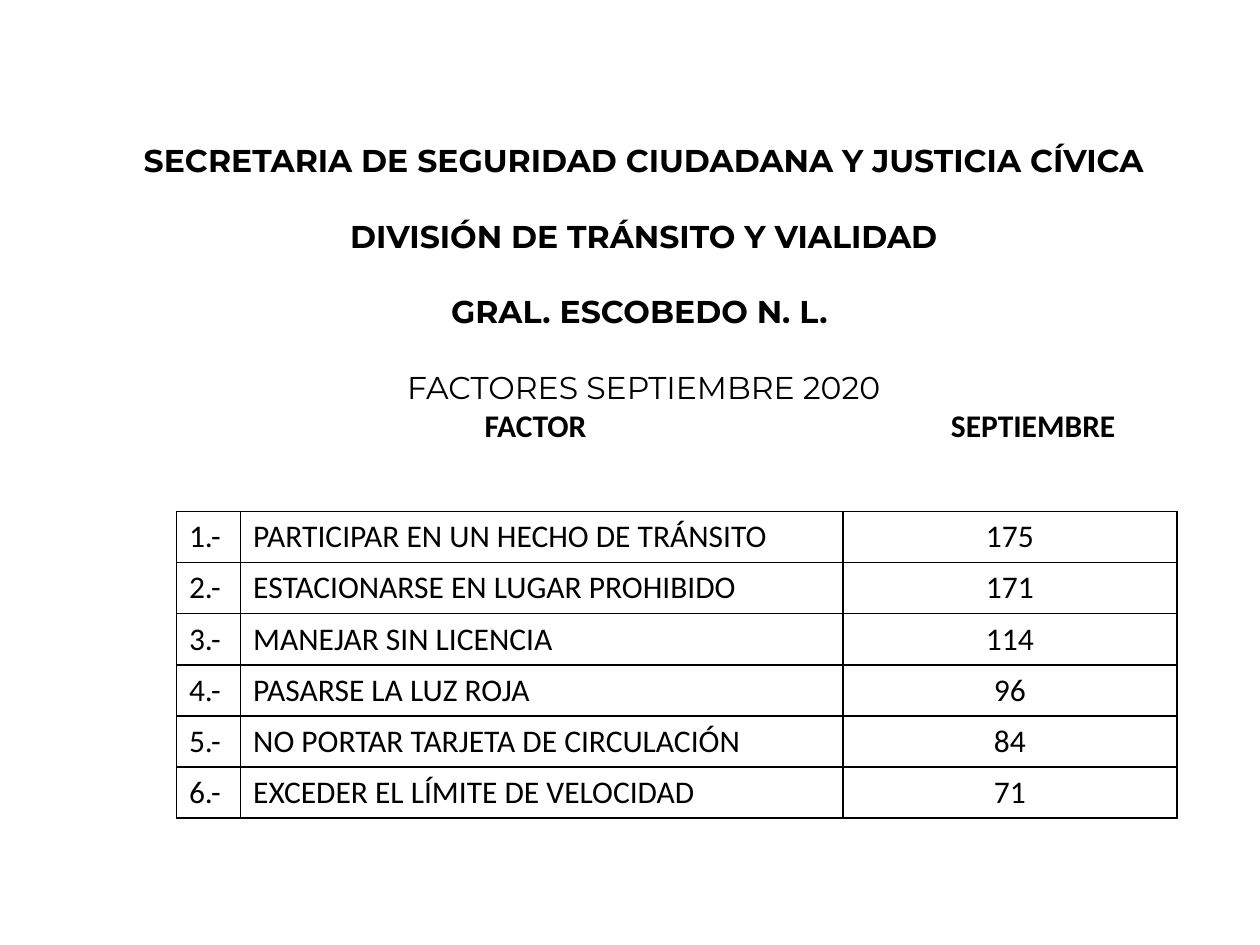
from pptx import Presentation
from pptx import util as u
from pptx.dml.color import RGBColor
from pptx.enum import text
from pptx.oxml.ns import qn
from lxml import etree

BLACK = RGBColor(0, 0, 0)
SIZE = 18
ALIGN = text.PP_ALIGN

HEADINGS = [
    ("SECRETARIA DE SEGURIDAD CIUDADANA Y JUSTICIA CÍVICA", True),
    ("DIVISIÓN DE TRÁNSITO Y VIALIDAD", True),
    ("GRAL. ESCOBEDO N. L. ", True),
    ("FACTORES SEPTIEMBRE 2020", False),
]
COLUMN_LABELS = [("FACTOR", 3.27), ("SEPTIEMBRE", 7.22)]
FACTORS = [
    ("PARTICIPAR EN UN HECHO DE TRÁNSITO", 175),
    ("ESTACIONARSE EN LUGAR PROHIBIDO", 171),
    ("MANEJAR SIN LICENCIA", 114),
    ("PASARSE LA LUZ ROJA", 96),
    ("NO PORTAR TARJETA DE CIRCULACIÓN", 84),
    ("EXCEDER EL LÍMITE DE VELOCIDAD", 71),
]
COLUMNS = [0.51, 4.78, 2.65]
COLUMN_ALIGN = [ALIGN.LEFT, ALIGN.LEFT, ALIGN.CENTER]
ROW_HEIGHT = 0.4


def write(para, words, align, face, bold=False):
    """Fill a paragraph and set its font."""
    para.text = words
    para.alignment = align
    font = para.font
    font.name, font.size, font.bold = face, u.Pt(SIZE), bold
    font.color.rgb = BLACK


def add_tabs(para, stops):
    """Give a paragraph centred tab stops, in inches."""
    tabs = etree.SubElement(para._p.get_or_add_pPr(), qn("a:tabLst"))
    for stop in stops:
        etree.SubElement(tabs, qn("a:tab"), pos=str(u.Inches(stop)), algn="ctr")


def add_borders(cell):
    """Draw a thin black line on each side of a cell."""
    props = cell._tc.get_or_add_tcPr()
    for index, side in enumerate(("lnL", "lnR", "lnT", "lnB")):
        line = etree.Element(qn(f"a:{side}"), w=str(u.Pt(1)))
        fill = etree.SubElement(line, qn("a:solidFill"))
        etree.SubElement(fill, qn("a:srgbClr"), val=str(BLACK))
        props.insert(index, line)


def add_heading(page):
    """Put the headings and the column labels in the title."""
    title = page.shapes.title
    title.left, title.top = u.Inches(0.88), u.Inches(1.07)
    title.width, title.height = u.Inches(8.46), u.Inches(2.83)
    frame = title.text_frame
    frame.word_wrap = True
    frame.auto_size = text.MSO_AUTO_SIZE.NONE
    frame.vertical_anchor = text.MSO_ANCHOR.TOP
    for index, (words, bold) in enumerate(HEADINGS):
        para = frame.add_paragraph() if index else frame.paragraphs[0]
        if index:
            para.space_before = u.Pt(21.6)
        write(para, words, ALIGN.CENTER, "Montserrat", bold)
    para = frame.add_paragraph()
    add_tabs(para, [stop for _, stop in COLUMN_LABELS])
    labels = "".join("\t" + label for label, _ in COLUMN_LABELS)
    write(para, labels, ALIGN.LEFT, "Calibri", True)


def add_factors(page):
    """Add the numbered table of factors."""
    frame = page.shapes.add_table(
        len(FACTORS), len(COLUMNS), u.Inches(1.4), u.Inches(4.06),
        u.Inches(sum(COLUMNS)), u.Inches(ROW_HEIGHT * len(FACTORS)))
    table = frame.table
    table.first_row = table.horz_banding = False
    for column, width in zip(table.columns, COLUMNS):
        column.width = u.Inches(width)
    for number, (factor, count) in enumerate(FACTORS, 1):
        row = table.rows[number - 1]
        row.height = u.Inches(ROW_HEIGHT)
        values = (f"{number}.-", factor, str(count))
        for cell, words, align in zip(row.cells, values, COLUMN_ALIGN):
            write(cell.text_frame.paragraphs[0], words, align, "Calibri")
            cell.fill.background()
            add_borders(cell)


def main():
    """Build the slide and save it."""
    deck = Presentation()
    deck.slide_width, deck.slide_height = u.Inches(10), u.Inches(7.5)
    page = deck.slides.add_slide(deck.slide_layouts.get_by_name("Title Only"))
    add_heading(page)
    add_factors(page)
    deck.save("out.pptx")


if __name__ == "__main__":
    main()
